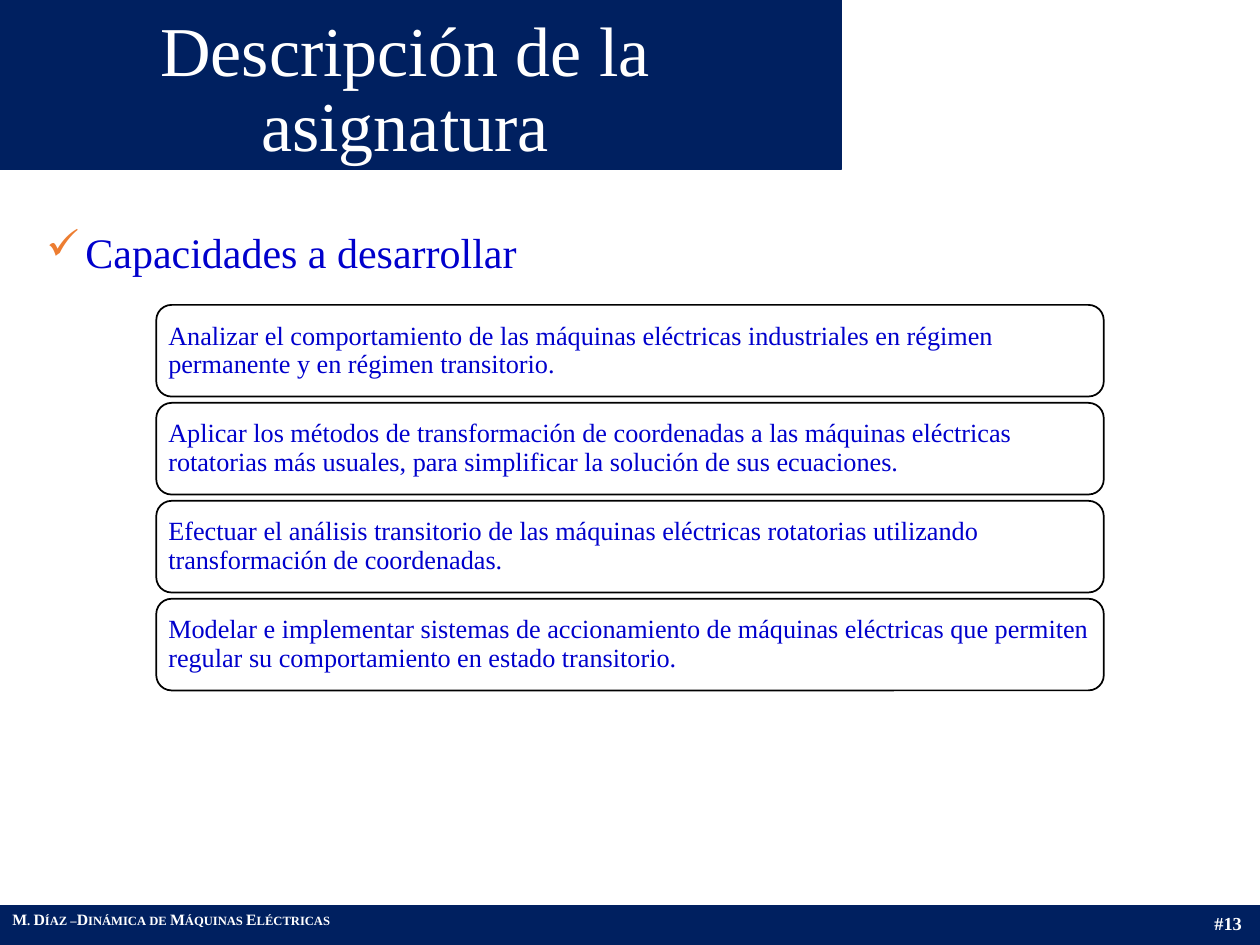
from lxml import etree
from pptx import Presentation
from pptx.dml.color import RGBColor
from pptx.enum.shapes import MSO_SHAPE as Shape
from pptx.enum.text import MSO_ANCHOR as Anchor, MSO_AUTO_SIZE as AutoSize, PP_ALIGN as Align
from pptx.oxml.ns import qn
from pptx.util import Inches, Pt

NAVY, WHITE, BLUE, BLACK, ORANGE = "002060", "FFFFFF", "0000CC", "000000", "ED7D31"


def add_box(kind, left, top, width, height, fill, line):
    shape = slide.shapes.add_shape(kind, *map(Inches, (left, top, width, height)))
    shape.shadow.inherit = False
    shape.fill.solid()
    shape.fill.fore_color.rgb = RGBColor.from_string(fill)
    shape.line.color.rgb = RGBColor.from_string(line)
    shape.line.width = Pt(1)
    return shape


def write(shape, text, size, color, align=Align.LEFT, anchor=Anchor.TOP, bold=False, spacing=1.0):
    """Fill the shape with one formatted paragraph and return that paragraph."""
    frame = shape.text_frame
    frame.word_wrap = True
    frame.auto_size = AutoSize.NONE
    frame.vertical_anchor = anchor
    paragraph = frame.paragraphs[0]
    paragraph.alignment, paragraph.line_spacing = align, spacing
    run = paragraph.add_run()
    run.text = text
    for name, value in {"name": "Times New Roman", "size": Pt(size), "bold": bold}.items():
        setattr(run.font, name, value)
    run.font.color.rgb = RGBColor.from_string(color)
    return paragraph


presentation = Presentation()
WIDTH, HEIGHT = 10, 7.5
presentation.slide_width, presentation.slide_height = Inches(WIDTH), Inches(HEIGHT)
slide = presentation.slides.add_slide(presentation.slide_layouts[5])

# Title band and footer band
FOOTER_TOP = 7.19
add_box(Shape.RECTANGLE, 0, 0, 6.68, 1.34, NAVY, NAVY)
add_box(Shape.RECTANGLE, 0, FOOTER_TOP, WIDTH, HEIGHT - FOOTER_TOP, NAVY, NAVY)

footer = slide.shapes.add_textbox(0, Inches(7.17), Inches(2.99), Inches(0.25))
paragraph = write(footer, "M. Díaz –Dinámica de Máquinas Eléctricas", 9, WHITE, bold=True)
paragraph.runs[0].font._element.set("cap", "small")
number = slide.shapes.add_textbox(Inches(9.54), Inches(FOOTER_TOP), Inches(0.58), Inches(0.28))
write(number, "#13", 10.5, WHITE, bold=True)

# The title goes in front of its band
title = slide.shapes.title
title.element.getparent().append(title.element)
title.left, title.top, title.width, title.height = 0, 0, Inches(6.43), Inches(1.45)
write(title, "Descripción de la asignatura", 40, WHITE, Align.CENTER, Anchor.MIDDLE, spacing=0.9)

# Capability rows
capabilities = [
    "Analizar el comportamiento de las máquinas eléctricas industriales en régimen permanente "
    "y en régimen transitorio.",
    "Aplicar los métodos de transformación de coordenadas a las máquinas eléctricas rotatorias "
    "más usuales, para simplificar la solución de sus ecuaciones.",
    "Efectuar el análisis transitorio de las máquinas eléctricas rotatorias utilizando "
    "transformación de coordenadas.",
    "Modelar e implementar sistemas de accionamiento de máquinas eléctricas que permiten "
    "regular su comportamiento en estado transitorio.",
]
ROWS_TOP, ROWS_BOTTOM, GAP, MARGIN = 2.42, 5.48, 0.05, 1.24
pitch = (ROWS_BOTTOM - ROWS_TOP + GAP) / len(capabilities)
for row, capability in enumerate(capabilities):
    box = add_box(Shape.ROUNDED_RECTANGLE, MARGIN, ROWS_TOP + row * pitch,
                  WIDTH - 2 * MARGIN, pitch - GAP, WHITE, BLACK)
    for side in ("left", "top", "right", "bottom"):
        setattr(box.text_frame, f"margin_{side}", Inches(0.06))
    write(box, capability, 15, BLUE, anchor=Anchor.MIDDLE, spacing=0.9)

# Heading with a check mark
heading = slide.shapes.add_textbox(Inches(0.27), Inches(1.75), Inches(5), Inches(0.5))
paragraph = write(heading, "Capacidades a desarrollar", 24, BLUE, Align.JUSTIFY)
properties = paragraph._p.get_or_add_pPr()
properties.set("marL", str(Inches(0.31)))
properties.set("indent", str(-Inches(0.31)))
bullet_color = etree.SubElement(properties, qn("a:buClr"))
etree.SubElement(bullet_color, qn("a:srgbClr"), val=ORANGE)
etree.SubElement(properties, qn("a:buChar"), char="✓")

presentation.save("out.pptx")
